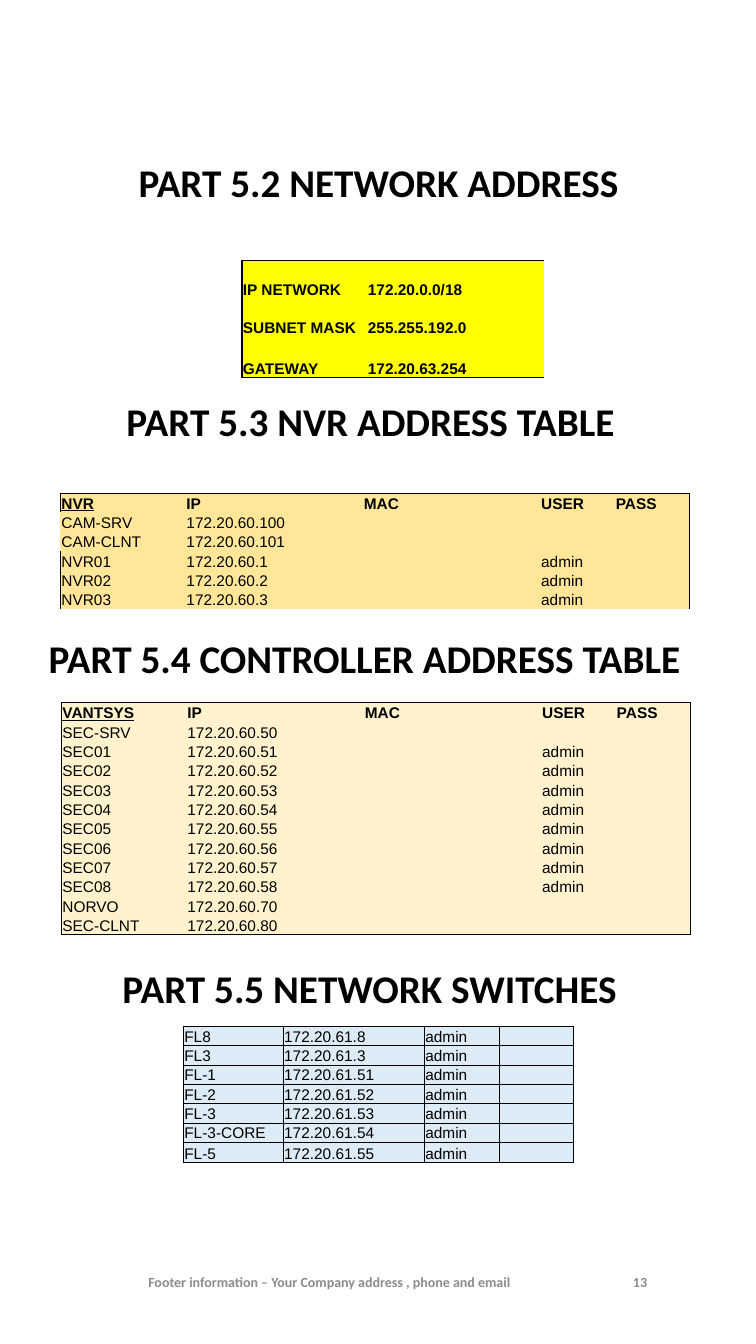
from lxml import etree
from pptx import Presentation
from pptx.dml.color import RGBColor
from pptx.enum import text
from pptx.oxml.ns import qn
from pptx.util import Pt

THEME = {
    "black": "000000", "grey": "8C8C8C",
    "yellow": "FFFF00", "gold": "FFE699", "cream": "FFF2CC", "blue": "DDEBF7",
    "heading_font": "Calibri", "table_font": "Arial",
    "heading": 28, "cell": 11, "footer": 10,
}


def write(sp, box, words, size, color, align, spacing=None):
    sp.left, sp.top, sp.width, sp.height = [Pt(v) for v in box]
    tf = sp.text_frame
    tf.word_wrap = True
    tf.auto_size = text.MSO_AUTO_SIZE.NONE
    tf.vertical_anchor = text.MSO_ANCHOR.MIDDLE
    p = tf.paragraphs[0]
    p.text = words
    p.alignment = align
    p.line_spacing = spacing
    p.font.name = THEME["heading_font"]
    p.font.size = Pt(size)
    p.font.bold = True
    p.font.color.rgb = RGBColor.from_string(color)


def add_edge(cell, side, width):
    ln = etree.SubElement(cell._tc.get_or_add_tcPr(), qn(f"a:ln{side}"), w=str(Pt(width)))
    fill = etree.SubElement(ln, qn("a:solidFill"))
    etree.SubElement(fill, qn("a:srgbClr"), val=THEME["black"])


prs = Presentation()
prs.slide_width, prs.slide_height = Pt(540), Pt(960)
s = prs.slides.add_slide(prs.slide_layouts[5])
center, left = text.PP_ALIGN.CENTER, text.PP_ALIGN.LEFT

headings = [
    ("PART 5.2 NETWORK ADDRESS", (37.4, 51.1, 465.8, 162)),
    ("PART 5.3 NVR ADDRESS TABLE", (31.7, 258.5, 465.8, 87.8)),
    ("PART 5.4 CONTROLLER ADDRESS TABLE", (27.4, 442.1, 465.8, 59.8)),
    ("PART 5.5 NETWORK SWITCHES", (31, 686.9, 465.8, 41)),
]
for i, (words, box) in enumerate(headings):
    sp = s.shapes.add_textbox(0, 0, 0, 0) if i else s.shapes.title
    write(sp, box, words, THEME["heading"], THEME["black"], center, 0.9)

footers = [
    ("Footer information – Your Company address , phone and email", (35.3, 889.9, 399.6, 51.1), center),
    ("13", (445, 889.9, 58.3, 51.1), left),
]
for words, box, align in footers:
    write(s.shapes.add_textbox(0, 0, 0, 0), box, words, THEME["footer"], THEME["grey"], align)

address_columns = [89.3, 126.7, 126.7, 53.3, 53.3]
address_header = ["IP", "MAC", "USER", "PASS"]
switches = [("FL8", 8), ("FL3", 3), ("FL-1", 51), ("FL-2", 52), ("FL-3", 53), ("FL-3-CORE", 54), ("FL-5", 55)]
tables = [
    dict(at=(172.8, 186), columns=[89.3, 126.7], heights=[27.4, 27.4, 28.8], fill="yellow",
         edges={"L": 1, "T": 1, "B": 1}, grid=0, open_left=(), bold_rows=3, header=False,
         rows=[["IP NETWORK", "172.20.0.0/18"],
               ["SUBNET MASK", "255.255.192.0"],
               ["GATEWAY", "172.20.63.254"]]),
    dict(at=(43.2, 352.2), columns=address_columns, heights=[13.83] * 6, fill="gold",
         edges={"L": 0.5, "R": 0.5, "T": 0.5}, grid=0, open_left=(1, 2), bold_rows=1, header=True,
         rows=[["NVR", *address_header],
               ["CAM-SRV", "172.20.60.100", "", "", ""],
               ["CAM-CLNT", "172.20.60.101", "", "", ""],
               *[[f"NVR0{n}", f"172.20.60.{n}", "", "admin", ""] for n in range(1, 4)]]),
    dict(at=(43.9, 501.9), columns=address_columns, heights=[13.83] * 12, fill="cream",
         edges={"L": 0.5, "R": 0.5, "T": 0.5, "B": 0.5}, grid=0, open_left=(), bold_rows=1, header=True,
         rows=[["VANTSYS", *address_header],
               ["SEC-SRV", "172.20.60.50", "", "", ""],
               *[[f"SEC0{n}", f"172.20.60.5{n}", "", "admin", ""] for n in range(1, 9)],
               ["NORVO", "172.20.60.70", "", "", ""],
               ["SEC-CLNT", "172.20.60.80", "", "", ""]]),
    dict(at=(131, 733), columns=[71.3, 100.8, 53.3, 53.3], heights=[13.83] * 6 + [14.4], fill="blue",
         edges={"L": 1, "R": 1, "T": 0.5, "B": 1}, grid=0.5, open_left=(), bold_rows=0, header=False,
         rows=[[name, f"172.20.61.{host}", "admin", ""] for name, host in switches]),
]

for t in tables:
    rows, columns, heights = t["rows"], t["columns"], t["heights"]
    frame = s.shapes.add_table(len(rows), len(columns), Pt(t["at"][0]), Pt(t["at"][1]),
                               Pt(sum(columns)), Pt(sum(heights)))
    table = frame.table
    table.first_row = table.horz_banding = False
    style = table._tbl.tblPr.find(qn("a:tableStyleId"))
    style.text = "{2D5ABB26-0587-4C30-8999-92F81FD0307C}"
    for column, width in zip(table.columns, columns):
        column.width = Pt(width)
    for r, (row, height) in enumerate(zip(rows, heights)):
        table.rows[r].height = Pt(height)
        for c, words in enumerate(row):
            cell = table.cell(r, c)
            outer = {"L": c == 0, "R": c == len(columns) - 1, "T": r == 0, "B": r == len(rows) - 1}
            for side, on_border in outer.items():
                width = t["edges"].get(side, 0) if on_border else t["grid"]
                if width and not (side == "L" and r in t["open_left"]):
                    add_edge(cell, side, width)
            cell.fill.solid()
            cell.fill.fore_color.rgb = RGBColor.from_string(THEME[t["fill"]])
            cell.margin_left = cell.margin_right = cell.margin_top = Pt(0.7)
            cell.margin_bottom = 0
            cell.vertical_anchor = text.MSO_ANCHOR.BOTTOM
            p = cell.text_frame.paragraphs[0]
            p.font.name = THEME["table_font"]
            p.font.size = Pt(THEME["cell"])
            p.font.color.rgb = RGBColor.from_string(THEME["black"])
            p.font.bold = r < t["bold_rows"]
            p.font.underline = t["header"] and r == c == 0
            if words:
                p.add_run().text = words
            else:
                etree.SubElement(p._p, qn("a:endParaRPr"), sz=str(THEME["cell"] * 100))

prs.save("out.pptx")
